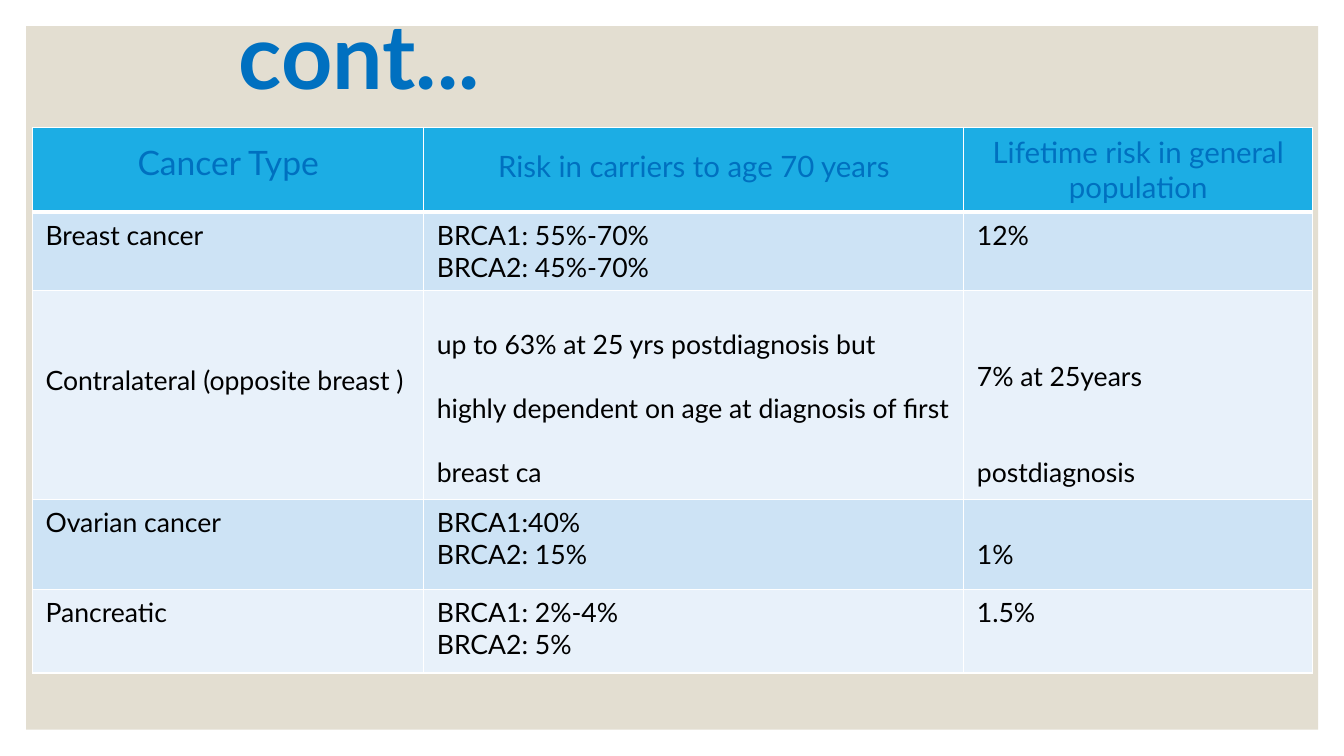
from lxml import etree
from pptx import Presentation
from pptx.dml.color import RGBColor
from pptx.enum import shapes, text
from pptx.oxml import ns
from pptx.util import Cm, Pt

BLUE = RGBColor(0x00, 0x70, 0xC0)
BLACK = RGBColor(0, 0, 0)
SAND = RGBColor(0xE3, 0xDE, 0xD1)
HEAD = RGBColor(0x1C, 0xAD, 0xE4)
BANDS = [RGBColor(0xE8, 0xF1, 0xFA), RGBColor(0xCD, 0xE3, 0xF5)]
FONT = "Lato"
CENTER, LEFT = text.PP_ALIGN.CENTER, text.PP_ALIGN.LEFT

WIDTHS = [9.86, 13.61, 8.79]
HEIGHTS = [2.13, 1.96, 5.28, 2.26, 2.11]
ROWS = [
    ["Cancer Type", "Risk in carriers to age 70 years",
     "Lifetime risk in general population"],
    ["Breast cancer", "BRCA1: 55%-70%\nBRCA2: 45%-70%", "12%"],
    ["Contralateral (opposite breast )",
     "up to 63% at 25 yrs postdiagnosis but highly dependent on age at "
     "diagnosis of first breast ca", "7% at 25years postdiagnosis"],
    ["Ovarian cancer", "BRCA1:40%\nBRCA2: 15%", "1%"],
    ["Pancreatic", "BRCA1: 2%-4%\nBRCA2: 5%", "1.5%"],
]
SPACING = {(0, 0): 1.2, (0, 1): 1.4, (2, 0): 3.1, (2, 1): 2.0,
           (2, 2): 3.0, (3, 2): 2.0}
HEAD_SIZES = [24, 21, 21]


def style(par, size, color, align, bold=False):
    par.alignment = align
    for run in par.runs:
        run.font.name = FONT
        run.font.size = Pt(size)
        run.font.bold = bold
        run.font.color.rgb = color


def add_edges(cell):
    """Draw white cell borders, heavier at the bottom."""
    props = cell._tc.get_or_add_tcPr()
    for i, (side, width) in enumerate([("L", 1), ("R", 1), ("T", 1), ("B", 3)]):
        line = etree.Element(ns.qn("a:ln" + side), w=str(Pt(width)))
        fill = etree.SubElement(line, ns.qn("a:solidFill"))
        etree.SubElement(fill, ns.qn("a:srgbClr"), val="FFFFFF")
        props.insert(i, line)


prs = Presentation()
prs.slide_width, prs.slide_height = Cm(33.87), Cm(19.05)
slide = prs.slides.add_slide(prs.slide_layouts[5])

panel = slide.shapes.add_shape(shapes.MSO_SHAPE.RECTANGLE,
                               Cm(0.66), Cm(0.66), Cm(32.56), Cm(17.73))
panel.shadow.inherit = False
panel.fill.solid()
panel.fill.fore_color.rgb = SAND
panel.line.fill.background()

title = slide.shapes.title
title.left, title.top = Cm(5.03), Cm(0.38)
title.width, title.height = Cm(8.05), Cm(1.96)
frame = title.text_frame
frame.text = "cont..."
frame.auto_size = text.MSO_AUTO_SIZE.NONE
frame.vertical_anchor = text.MSO_ANCHOR.MIDDLE
frame.margin_left = frame.margin_right = Cm(0.33)
frame.margin_top = frame.margin_bottom = Cm(0.33)
style(frame.paragraphs[0], 64, BLUE, CENTER, True)
slide.shapes._spTree.remove(panel._element)
title._element.addprevious(panel._element)

table = slide.shapes.add_table(len(ROWS), len(WIDTHS), Cm(0.82), Cm(3.22),
                               Cm(sum(WIDTHS)), Cm(sum(HEIGHTS))).table
for col, width in zip(table.columns, WIDTHS):
    col.width = Cm(width)
for r, (row, height) in enumerate(zip(ROWS, HEIGHTS)):
    table.rows[r].height = Cm(height)
    for c, words in enumerate(row):
        cell = table.cell(r, c)
        cell.margin_left = cell.margin_right = Cm(0.33)
        cell.margin_top = cell.margin_bottom = Cm(0.17)
        cell.fill.solid()
        cell.fill.fore_color.rgb = BANDS[r % 2] if r else HEAD
        cell.text_frame.text = words
        for par in cell.text_frame.paragraphs:
            par.line_spacing = SPACING.get((r, c), 1.0)
            if r:
                style(par, 19, BLACK, LEFT)
            else:
                style(par, HEAD_SIZES[c], BLUE, CENTER)
        if r == 0:
            add_edges(cell)

prs.save("out.pptx")
